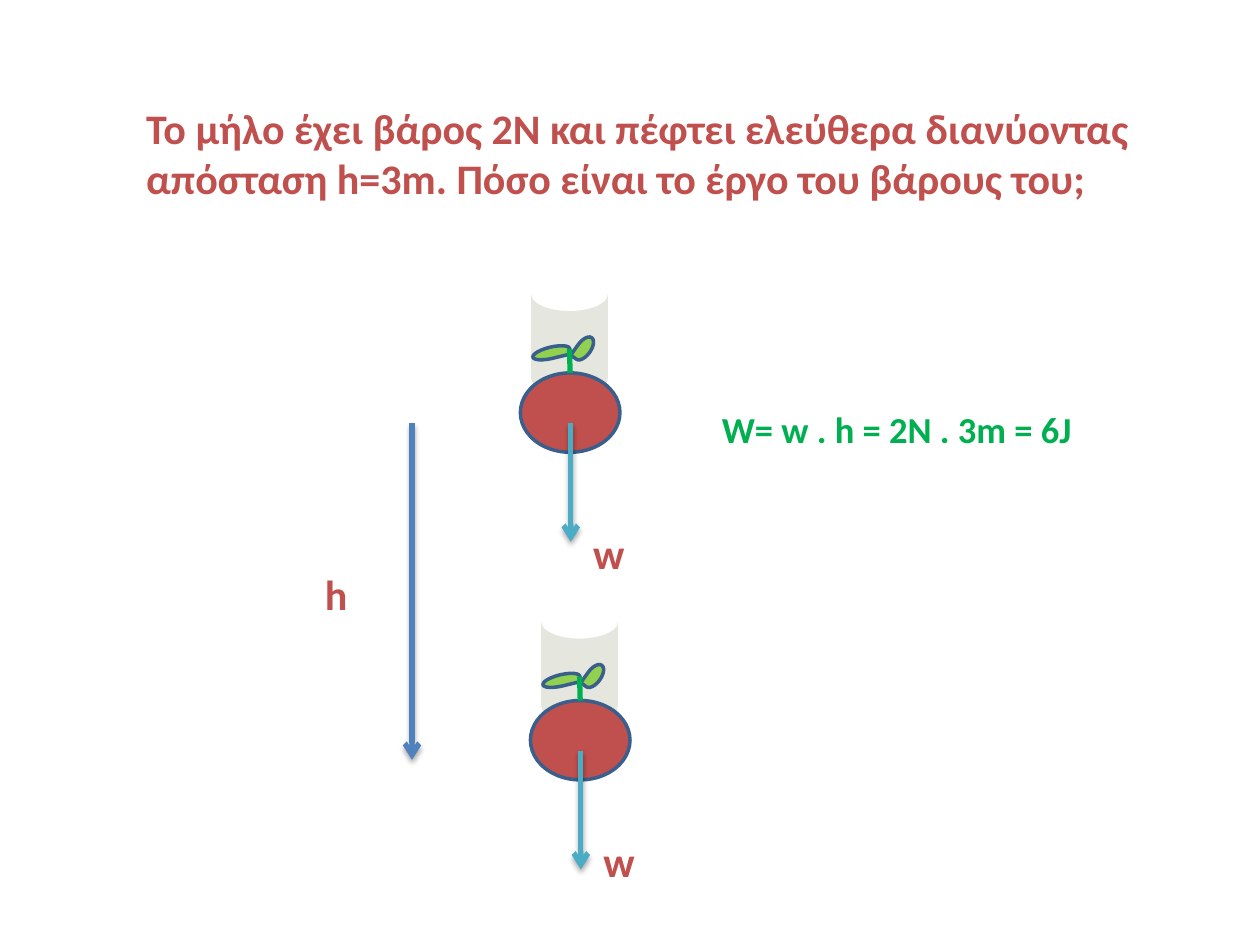
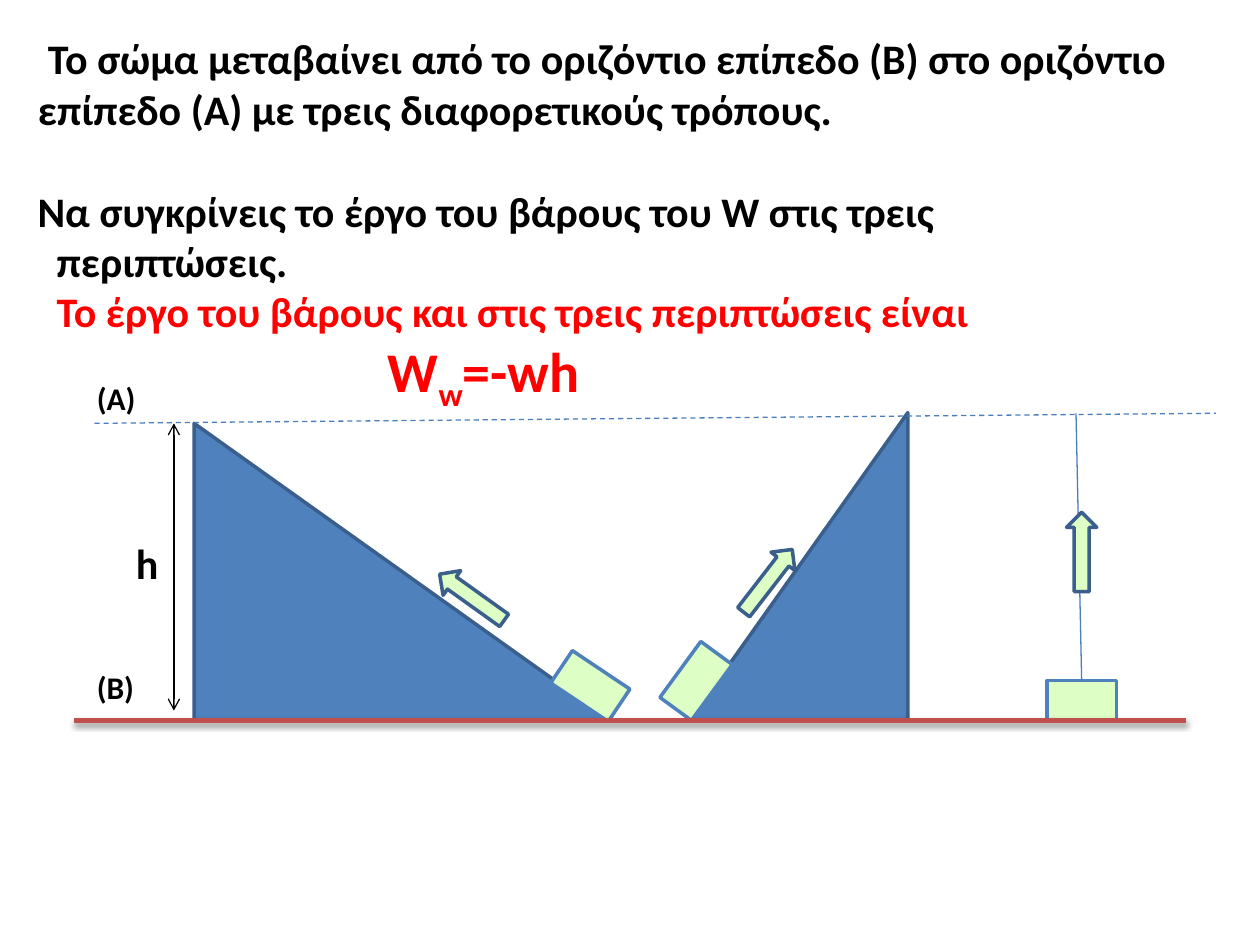
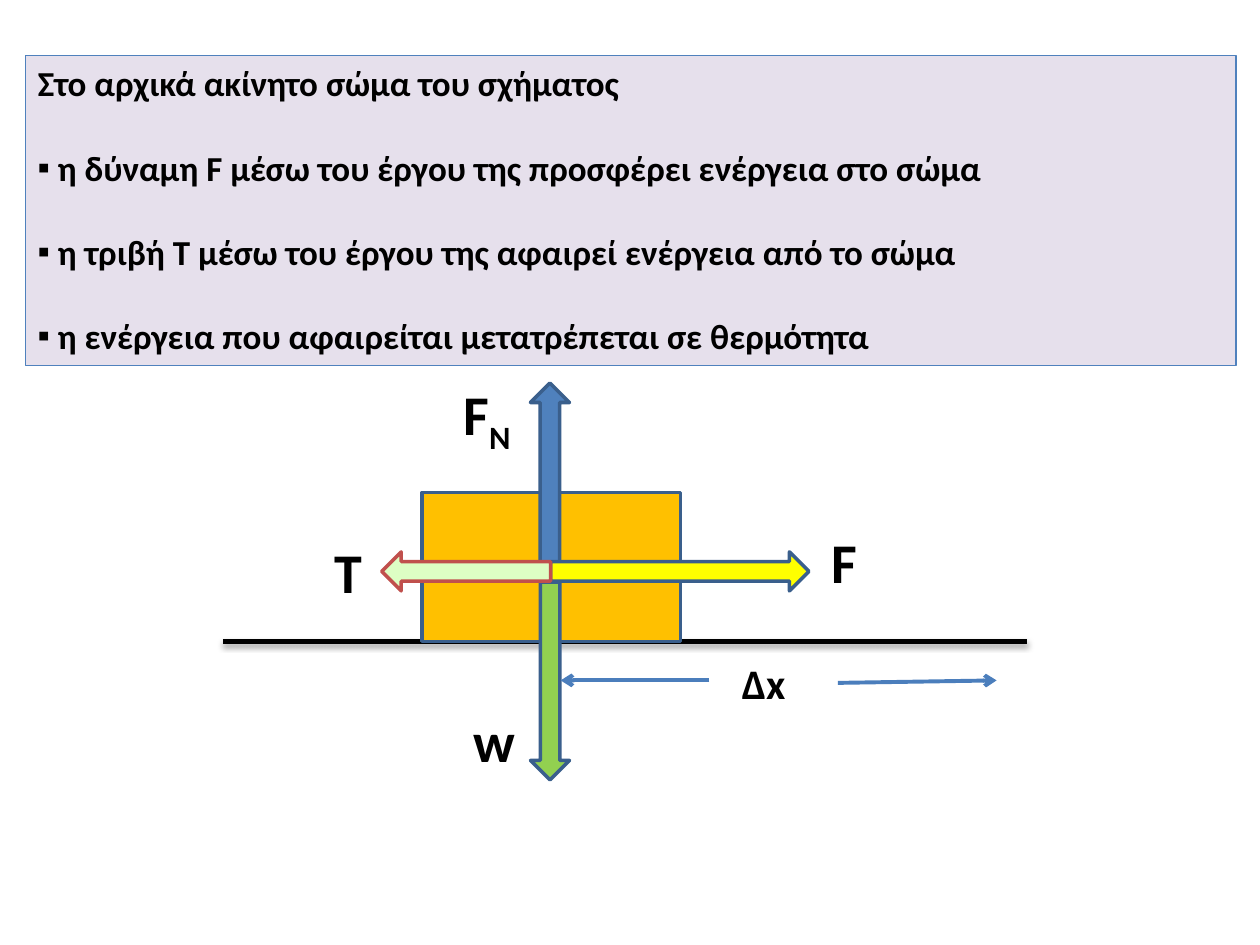
import dataclasses

import pptx
import pptx.dml.color
import pptx.enum.dml
import pptx.enum.shapes
import pptx.enum.text
import pptx.oxml
import pptx.oxml.ns
import pptx.util

Shape = pptx.enum.shapes.MSO_SHAPE
CELL = pptx.util.Inches(0.1)  # the slide is a grid of 100 columns and 75 rows


@dataclasses.dataclass(frozen=True)
class Theme:
    font: str = "Calibri"
    black: str = "000000"
    red: str = "C0504D"
    alert: str = "FF0000"
    green: str = "00B050"
    leaf: str = "92D050"
    mint: str = "DDFEC4"
    gold: str = "FFC000"
    yellow: str = "FFFF00"
    blue: str = "4F81BD"
    edge: str = "3A5F8C"
    thin: str = "4B7EBC"
    teal: str = "4BACC6"
    trail: str = "E5E7DF"
    panel: str = "E6E0EC"
    tag: int = 18
    body: int = 20
    head: int = 24
    big: int = 32
    sum: int = 36


T = Theme()


@dataclasses.dataclass(frozen=True)
class Box:
    x: float
    y: float
    w: float = 0
    h: float = 0

    def sub(self, x, y, w=0, h=0):
        """A box placed relative to this one."""
        return Box(self.x + x, self.y + y, w, h)

    def emu(self):
        return [round(v * CELL) for v in (self.x, self.y, self.w, self.h)]


# ---- shared helpers ----
def dress(item, vals):
    for key, val in vals.items():
        setattr(item, key, val)


def rgb(code):
    return pptx.dml.color.RGBColor.from_string(code)


def child(node, tag, **attrs):
    part = pptx.oxml.parse_xml(f"<a:{tag} {pptx.oxml.ns.nsdecls('a')}/>")
    for key, val in attrs.items():
        part.set(key, str(val))
    node.append(part)
    return part


def paint(shape, fill, line, width):
    shape.fill.solid()
    shape.fill.fore_color.rgb = rgb(fill)
    if line:
        shape.line.color.rgb = rgb(line)
        shape.line.width = pptx.util.Pt(width)
    else:
        shape.line.fill.background()


def draw(slide, kind, box, fill, line=T.edge, turn=0):
    shape = slide.shapes.add_shape(kind, *box.emu())
    shape.shadow.inherit = False
    shape.rotation = turn
    paint(shape, fill, line, 2)
    return shape


def rule(slide, start, end, color, width, ends=(), dash=False, shade=False):
    """A straight line; ends names the arrowed ends, headEnd before tailEnd."""
    spots = start.emu()[:2] + end.emu()[:2]
    line = slide.shapes.add_connector(
        pptx.enum.shapes.MSO_CONNECTOR.STRAIGHT, *spots)
    line.line.color.rgb = rgb(color)
    line.line.width = pptx.util.Pt(width)
    if dash:
        line.line.dash_style = pptx.enum.dml.MSO_LINE.DASH
    for name in ends:
        child(line.line._get_or_add_ln(), name, type="arrow")
    glow = child(line._element.spPr, "effectLst")
    if shade:
        cast = child(glow, "outerShdw", blurRad=40000, dist=23000,
                     dir=5400000, rotWithShape=0)
        child(child(cast, "srgbClr", val=T.black), "alpha", val=35000)
    return line


def write(frame, paras, size, color=T.black, wrap=True):
    """Each paragraph is a text, or a dict of runs and its layout."""
    dress(frame, {"word_wrap": wrap,
                  "auto_size": pptx.enum.text.MSO_AUTO_SIZE.NONE,
                  "vertical_anchor": pptx.enum.text.MSO_ANCHOR.TOP})
    for num, para in enumerate(paras):
        para = {"runs": [(para, {})]} if isinstance(para, str) else para
        line = frame.add_paragraph() if num else frame.paragraphs[0]
        line.alignment = pptx.enum.text.PP_ALIGN.LEFT
        line.space_before = pptx.util.Pt(para.get("gap", 0))
        prop = line._p.get_or_add_pPr()
        prop.set("marL", str(round(para.get("left", 0) * CELL)))
        prop.set("indent", str(round(para.get("first", 0) * CELL)))
        if "mark" in para:
            child(prop, "buFont", typeface="Arial")
            child(prop, "buChar", char=para["mark"])
        for text, form in para["runs"]:
            run = line.add_run()
            run.text = text
            dress(run.font, {"name": T.font, "bold": True,
                             "size": pptx.util.Pt(form.get("size", size))})
            run.font.color.rgb = rgb(form.get("color", color))
            if "base" in form:
                run.font._element.set("baseline", str(form["base"] * 1000))


def note(slide, box, paras, size, color=T.black, wrap=True):
    paras = [paras] if isinstance(paras, str) else paras
    frame = slide.shapes.add_textbox(*box.emu()).text_frame
    write(frame, paras, size, color, wrap)


def begin(deck, box, para, size, color=T.black):
    """A title-only slide with its title moved to the box."""
    slide = deck.slides.add_slide(deck.slide_layouts[5])
    title = slide.shapes.title
    dress(title, dict(zip(("left", "top", "width", "height"), box.emu())))
    write(title.text_frame, [para], size, color)
    return slide


# ---- slide 1: falling apple ----
def apple(slide, box, drop):
    """Apple with its trail, leaves and weight; drop is the label's row."""
    draw(slide, Shape.FLOWCHART_STORED_DATA, box.sub(0, 1, 8, 6.1),
         T.trail, None, 270)
    fruit = draw(slide, Shape.OVAL, box.sub(0.1, 6.3, 7.9, 6.3), T.red)
    draw(slide, Shape.TEAR, box.sub(2.1, 3.2, 0.9, 3), T.leaf, turn=76.5)
    draw(slide, Shape.TEAR, box.sub(4.6, 3.3, 1.1, 2.1), T.leaf, turn=215.6)
    stem = rule(slide, box.sub(4.1, 6.3), box.sub(4, 4.4), T.green, 3)
    stem.begin_connect(fruit, 0)
    rule(slide, box.sub(4.1, 10.3), box.sub(4.1, 19.7), T.teal, 3,
         ["tailEnd"], shade=True)
    note(slide, box.sub(4.9, drop, 6.3, 5), "w", T.head, T.red)


def fall(deck):
    slide = begin(deck, Box(10.6, 7.6, 81.1, 13.1),
                  "Το μήλο έχει βάρος 2N και πέφτει ελεύθερα διανύοντας "
                  "απόσταση h=3m. Πόσο είναι το έργο του βάρους του;",
                  T.head, T.red)
    top = Box(41.2, 23.3)
    apple(slide, top, 18.1)
    apple(slide, top.sub(0.8, 26), 16.5)
    # Height of the fall and the answer
    rule(slide, Box(32.7, 33.6), Box(32.7, 60.3), T.blue, 3,
         ["tailEnd"], shade=True)
    note(slide, Box(24.8, 44.6, 6.3, 5), "h", T.head, T.red)
    note(slide, Box(56.3, 31.2, 36.2, 7.1),
         [{"runs": [("W= w . h = 2N . 3m = 6J", {"base": 30})]}],
         T.sum, T.green)


# ---- slide 2: three ways up ----
def ramps(slide, box):
    """Slopes, blocks and arrows; the box spans levels A and B."""
    draw(slide, Shape.RIGHT_TRIANGLE, box.sub(9.5, 0.8, 33.1, 23.6), T.blue)
    draw(slide, Shape.RIGHT_TRIANGLE, box.sub(45.3, 3.5, 24.4, 17.3),
         T.blue, turn=270)
    rule(slide, box.sub(1.6, 0.8), box.sub(90.6, 0), T.thin, 0.75, dash=True)
    blocks = [draw(slide, Shape.RECTANGLE, box.sub(x, y, 5.5, 3.1),
                   T.mint, T.blue, turn)
              for x, y, turn in ((38.2, 20.1, 33.8), (46.6, 19.7, 306.2),
                                 (77.2, 21.2, 0))]
    cord = rule(slide, box.sub(79.5, 0), box.sub(79.9, 21.2), T.thin, 0.75)
    cord.end_connect(blocks[-1], 0)
    rule(slide, box.sub(0, box.h), box.sub(box.w, box.h), T.red, 3, shade=True)
    for x, y, turn in ((28.4, 13.4, 215.6), (51.9, 12.1, 307.7),
                       (76.8, 9.8, 270)):
        draw(slide, Shape.RIGHT_ARROW, box.sub(x, y, 6.3, 2.4),
             T.mint, turn=turn)
    # Levels and height
    for y, name in ((-3.2, "(Α)"), (19.7, "(Β)")):
        note(slide, box.sub(0.8, y, 6.3, 4), name, T.tag)
    note(slide, box.sub(3.9, 9.4, 5.5, 5), "h", T.head)
    rule(slide, box.sub(7.9, 0.8), box.sub(7.9, 23.6), T.black, 0.75,
         ["headEnd", "tailEnd"])


def climb(deck):
    text = Box(2, 2.1, 96.1, 9)
    lead = ("Το σώμα μεταβαίνει από το οριζόντιο επίπεδο (B) στο "
            "οριζόντιο επίπεδο (A) με τρεις διαφορετικούς τρόπους.")
    slide = begin(deck, text, {"runs": [(lead, {})], "first": 0.8}, T.head)
    red = {"color": T.alert}
    big = red | {"size": T.big}
    note(slide, text.sub(0, 12.1, text.w, 22.6), [
        "Να συγκρίνεις το έργο του βάρους του W στις τρεις",
        {"runs": [("περιπτώσεις.", {})], "left": 1.5},
        {"runs": [("Το έργο του βάρους και στις τρεις περιπτώσεις είναι",
                   red)], "left": 1.5},
        {"runs": [("W", big), ("w", big | {"base": -25}), ("=-wh", big)],
         "left": 27.8},
    ], T.head)
    ramps(slide, Box(5.9, 32.8, 88.2, 24.4))


# ---- slide 3: forces on a body ----
def forces(slide, box):
    """The body fills the box; its forces start at the middle."""
    rule(slide, box.sub(-15.8, box.h), box.sub(48, box.h), T.black, 3,
         shade=True)
    draw(slide, Shape.RECTANGLE, box, T.gold)
    for kind, x, y, w, h, fill, line, turn in (
            (Shape.RIGHT_ARROW, 2.3, 13.4, 15.7, 3.1, T.leaf, T.edge, 90),
            (Shape.UP_ARROW, 8.6, -8.7, 3.1, 15.7, T.blue, T.edge, 0),
            (Shape.RIGHT_ARROW, 10.2, 4.7, 20.5, 3.1, T.yellow, T.edge, 0),
            (Shape.LEFT_ARROW, -3.2, 4.7, 13.4, 3.1, T.mint, T.red, 0)):
        draw(slide, kind, box.sub(x, y, w, h), fill, line, turn)
    # Names of the forces
    norm = {"runs": [("F", {}), ("N", {"base": -25})]}
    for x, y, w, name in ((31.5, 2.3, 7.9, "F"), (2.3, -9.5, 6.4, norm),
                          (-7.9, 3.1, 3.9, "T"), (3.1, 16.5, 6.3, "w")):
        note(slide, box.sub(x, y, w, 6.4), [name], T.big, wrap=w > 6.3
             or name == "w")
    # Shift along the ground
    note(slide, box.sub(24.4, 12.6, 8.7, 5), "Δx", T.head)
    for start, end in (((33, 15.1), (45.6, 14.9)), ((22.8, 14.9), (11, 14.9))):
        rule(slide, box.sub(*start), box.sub(*end), T.thin, 2.25, ["tailEnd"])


def body(deck):
    panel = Box(2, 4.4, 96.1, 24.6)
    slide = begin(deck, panel, "Στο αρχικά ακίνητο σώμα του σχήματος", T.body)
    paint(slide.shapes.title, T.panel, T.blue, 0.75)
    facts = ("η δύναμη F μέσω του έργου της προσφέρει ενέργεια στο σώμα",
             "η τριβή Τ μέσω του έργου της αφαιρεί ενέργεια από το σώμα",
             "η ενέργεια που αφαιρείται μετατρέπεται σε θερμότητα")
    note(slide, panel.sub(0, 6.7, panel.w, 17.9),
         [{"runs": [(fact, {})], "mark": "▪", "left": 1.6, "first": -1.6,
           "gap": 24 if num else 0} for num, fact in enumerate(facts)],
         T.body)
    forces(slide, Box(33.5, 39.1, 20.5, 11.8))


def main():
    deck = pptx.Presentation()
    dress(deck, {"slide_width": 100 * CELL, "slide_height": 75 * CELL})
    for build in (fall, climb, body):
        build(deck)
    deck.save("out.pptx")


if __name__ == "__main__":
    main()
